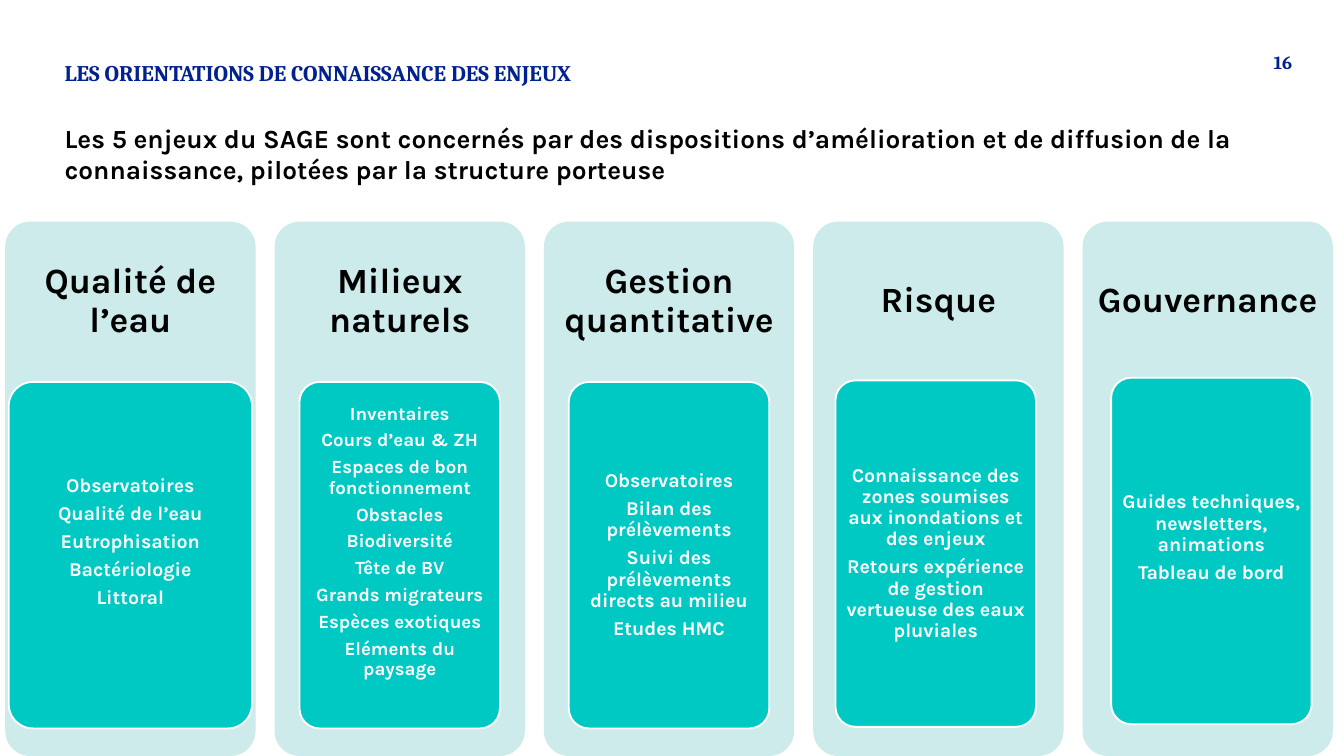
from dataclasses import dataclass

from lxml import etree
from pptx import Presentation
from pptx import util as u
from pptx.dml.color import RGBColor
from pptx.enum import shapes, text
from pptx.oxml.ns import qn

# Content
PAGE = "16"
SECTION = "LES ORIENTATIONS DE CONNAISSANCE DES ENJEUX"
MESSAGE = ("Les 5 enjeux du SAGE sont concernés par des dispositions d’amélioration "
           "et de diffusion de la connaissance, pilotées par la structure porteuse")

# Each theme: heading, items, then card settings in cm that differ from CARD
THEMES = [
    ("Qualité de l’eau",
     ["Observatoires", "Qualité de l’eau", "Eutrophisation", "Bactériologie", "Littoral"],
     dict(width=4.6, lift=0.5)),
    ("Milieux naturels",
     ["Inventaires", "Cours d’eau & ZH", "Espaces de bon fonctionnement", "Obstacles",
      "Biodiversité", "Tête de BV", "Grands migrateurs", "Espèces exotiques",
      "Eléments du paysage"],
     dict(lift=0.5, size=10)),
    ("Gestion quantitative",
     ["Observatoires", "Bilan des prélèvements",
      "Suivi des prélèvements directs au milieu", "Etudes HMC"],
     dict()),
    ("Risque",
     ["Connaissance des zones soumises aux inondations et des enjeux",
      "Retours expérience de gestion vertueuse des eaux pluviales"],
     dict(dx=-0.05, top=7.19)),
    ("Gouvernance",
     ["Guides techniques, newsletters, animations", "Tableau de bord"],
     dict(dx=0.07, top=7.14, lift=0.5)),
]


@dataclass(frozen=True)
class Theme:
    serif: str = "Cambria"
    sans: str = "Karla"
    navy: str = "00218F"
    black: str = "000000"
    white: str = "FFFFFF"
    pale: str = "CCEBEA"
    teal: str = "00C9C4"
    page: float = 10
    section: float = 12
    message: float = 14
    heading: float = 19
    item: float = 10.5


T = Theme()

# Geometry in cm
SLIDE_W, SLIDE_H = 25.4, 14.29
MARGIN, TEXT_W = 1.12, 22.6
COL_X, COL_Y, COL_W, COL_STEP = 0.1, 4.19, 4.73, 5.09
HEADING_H = 3.02
CARD_H = 6.55
CARD = dict(width=3.79, top=7.22, dx=0, lift=0, size=T.item)


def place(sp, x, y, w, h):
    sp.left, sp.top, sp.width, sp.height = (u.Cm(v) for v in (x, y, w, h))


def write(sp, lines, *, size, font=T.sans, color=T.black, align=text.PP_ALIGN.LEFT,
          anchor=text.MSO_ANCHOR.TOP, insets=(0.1, 0, 0.1, 0), spacing=1.0, after=0,
          wrap=True):
    """Fill a shape with bold paragraphs; insets are left, top, right, bottom in cm."""
    tf = sp.text_frame
    tf.word_wrap = wrap
    tf.auto_size = text.MSO_AUTO_SIZE.NONE
    tf.vertical_anchor = anchor
    tf.margin_left, tf.margin_top, tf.margin_right, tf.margin_bottom = map(u.Cm, insets)
    for i, line in enumerate(lines):
        p = tf.paragraphs[0] if i == 0 else tf.add_paragraph()
        p.alignment, p.line_spacing = align, spacing
        p.space_before, p.space_after = u.Pt(0), u.Pt(after)
        r = p.add_run()
        r.text = line
        r.font.name, r.font.size, r.font.bold = font, u.Pt(size), True
        r.font.color.rgb = RGBColor.from_string(color)


def rounded(slide, x, y, w, h, fill, line=None):
    sp = slide.shapes.add_shape(shapes.MSO_SHAPE.ROUNDED_RECTANGLE,
                                *map(u.Cm, (x, y, w, h)))
    sp.adjustments[0] = 0.1
    sp.shadow.inherit = False
    sp.fill.solid()
    sp.fill.fore_color.rgb = RGBColor.from_string(fill)
    if line:
        sp.line.color.rgb = RGBColor.from_string(line)
        sp.line.width = u.Pt(1)
    else:
        sp.line.fill.background()
    return sp


def textbox(slide, x, y, w, h):
    return slide.shapes.add_textbox(*map(u.Cm, (x, y, w, h)))


def add_column(slide, index, heading, items, options):
    card = {**CARD, **options}
    x = COL_X + index * COL_STEP
    centred = dict(align=text.PP_ALIGN.CENTER, anchor=text.MSO_ANCHOR.MIDDLE, spacing=0.9)

    # Panel and heading
    rounded(slide, x, COL_Y, COL_W, SLIDE_H - COL_Y, T.pale)
    write(textbox(slide, x, COL_Y, COL_W, HEADING_H), [heading],
          size=T.heading, insets=(0.2,) * 4, **centred)

    # Card with its items, raised by a deeper bottom inset where asked
    card_x = x + (COL_W - card["width"]) / 2 + card["dx"]
    sp = rounded(slide, card_x, card["top"], card["width"], CARD_H, T.teal, T.white)
    write(sp, items, size=card["size"], color=T.white, after=3.6,
          insets=(0.07, 0.05, 0.07, 0.05 + card["lift"]), **centred)


def main():
    prs = Presentation()
    prs.slide_width, prs.slide_height = u.Cm(SLIDE_W), u.Cm(SLIDE_H)
    slide = prs.slides.add_slide(prs.slide_layouts[1])

    # Page number
    write(textbox(slide, 23.8, 0.97, 0.89, 0.43), [PAGE], size=T.page, font=T.serif,
          color=T.navy, align=text.PP_ALIGN.CENTER, wrap=False)

    # Title and section label
    title, section = slide.shapes.title, slide.placeholders[1]
    place(title, MARGIN, 2.31, TEXT_W, 1.2)
    write(title, [MESSAGE], size=T.message)
    place(section, MARGIN, 1.12, TEXT_W, 0.51)
    pPr = section.text_frame.paragraphs[0]._p.get_or_add_pPr()
    pPr.set("marL", "0")
    pPr.set("indent", "0")
    etree.SubElement(pPr, qn("a:buNone"))
    write(section, [SECTION], size=T.section, font=T.serif, color=T.navy,
          anchor=text.MSO_ANCHOR.BOTTOM)

    # Five columns
    for i, (heading, items, options) in enumerate(THEMES):
        add_column(slide, i, heading, items, options)

    prs.save("out.pptx")


if __name__ == "__main__":
    main()
